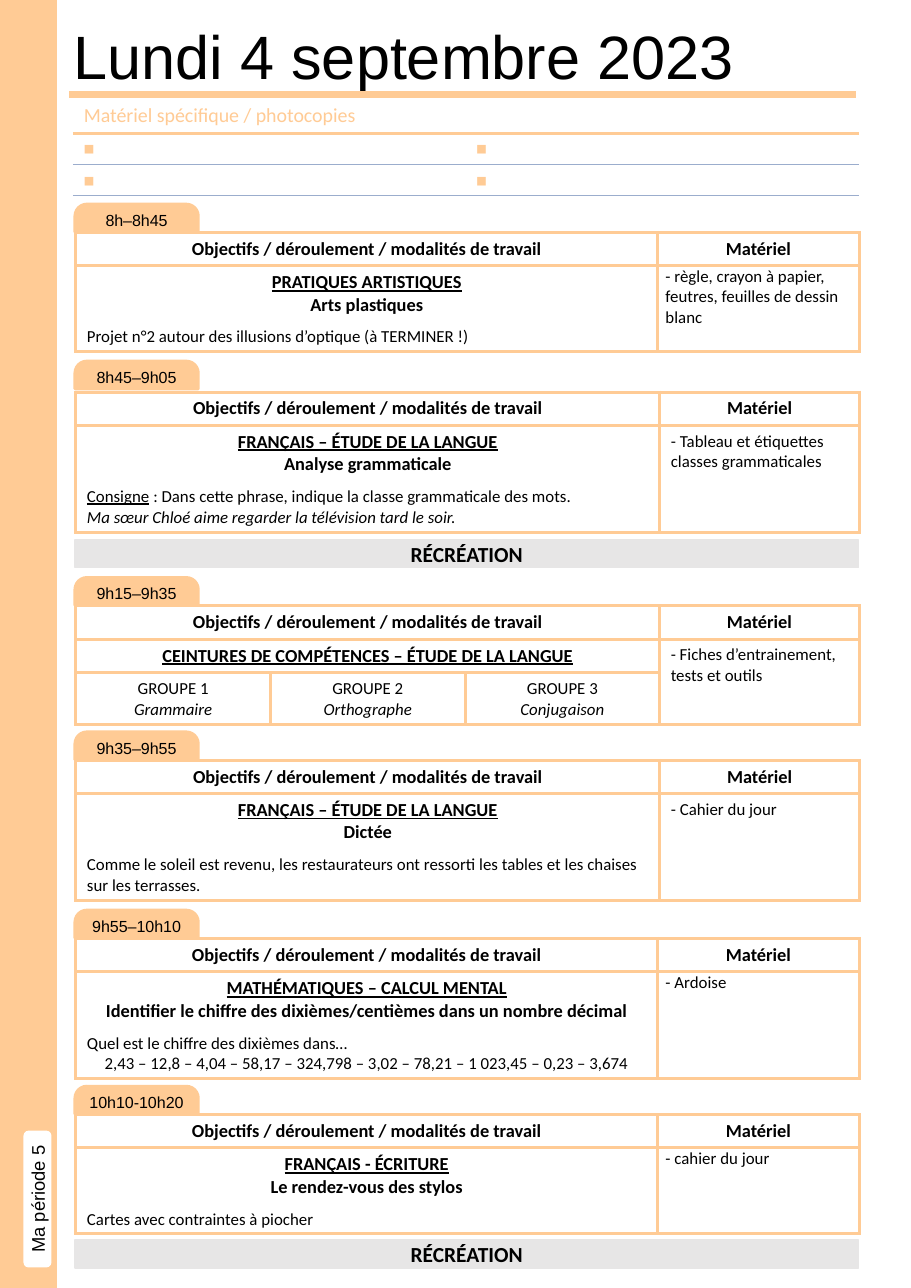
from dataclasses import dataclass

from lxml import etree
from pptx import Presentation
from pptx.dml.color import RGBColor
from pptx.enum.shapes import MSO_CONNECTOR, MSO_SHAPE
from pptx.enum.text import MSO_ANCHOR, PP_ALIGN
from pptx.oxml.ns import qn
from pptx.util import Cm, Pt

LEFT, MID = PP_ALIGN.LEFT, PP_ALIGN.CENTER
TOP, CENTER = MSO_ANCHOR.TOP, MSO_ANCHOR.MIDDLE
RECT, ROUND = MSO_SHAPE.RECTANGLE, MSO_SHAPE.ROUNDED_RECTANGLE
TAB = MSO_SHAPE.ROUND_2_SAME_RECTANGLE
STRAIGHT = MSO_CONNECTOR.STRAIGHT


@dataclass
class Theme:
    peach: str = "FFCB95"
    grey: str = "E7E6E6"
    blue: str = "9BADCD"
    white: str = "FFFFFF"
    black: str = "000000"
    sans: str = "Arial"
    main: str = "Calibri"
    title: float = 40
    band: float = 14
    list: float = 13
    head: float = 12
    body: float = 11
    hour: float = 10.5


THEME = Theme()


@dataclass
class Line:
    """One paragraph; lead is an underlined opening, gap the space before."""
    text: str = ""
    size: float = THEME.body
    bold: bool = False
    under: bool = False
    ital: bool = False
    align: int = LEFT
    gap: float = 0
    lead: str = ""
    font: str = THEME.main
    color: str = THEME.black


def head(text, under=False):
    return Line(text, THEME.head, bold=True, under=under, align=MID)


def write(frame, lines):
    frame.word_wrap = True
    for i, line in enumerate(lines):
        para = frame.add_paragraph() if i else frame.paragraphs[0]
        para.alignment = line.align
        para.space_before = Pt(line.gap)
        font = para.font
        font.size, font.name = Pt(line.size), line.font
        font.bold, font.italic = line.bold, line.ital
        font.underline = line.under
        font.color.rgb = RGBColor.from_string(line.color)
        if line.lead:
            run = para.add_run()
            run.text, run.font.underline = line.lead, True
        if line.text:
            para.add_run().text = line.text


def edge(cell, side, color, width):
    """Draw one cell border; no color means no line."""
    line = etree.SubElement(cell._tc.get_or_add_tcPr(), qn("a:ln" + side))
    if not color:
        etree.SubElement(line, qn("a:noFill"))
        return
    line.set("w", str(Pt(width)))
    fill = etree.SubElement(line, qn("a:solidFill"))
    etree.SubElement(fill, qn("a:srgbClr")).set("val", color)


class Page:
    def __init__(self, slide, theme):
        self.shapes, self.theme = slide.shapes, theme

    def label(self, x, y, w, h, line):
        box = self.shapes.add_textbox(Cm(x), Cm(y), Cm(w), Cm(h))
        write(box.text_frame, [line])

    def box(self, kind, x, y, w, h, color, line=None, width=1):
        box = self.shapes.add_shape(kind, Cm(x), Cm(y), Cm(w), Cm(h))
        box.shadow.inherit = False
        box.fill.solid()
        box.fill.fore_color.rgb = RGBColor.from_string(color)
        box.line.color.rgb = RGBColor.from_string(color)
        box.line.width = Pt(width)
        if line:
            box.text_frame.vertical_anchor = CENTER
            write(box.text_frame, [line])
        return box

    def rule(self, x, y, end, color, width):
        rule = self.shapes.add_connector(STRAIGHT, Cm(x), Cm(y), Cm(end), Cm(y))
        rule.line.color.rgb = RGBColor.from_string(color)
        rule.line.width = Pt(width)
        etree.SubElement(rule.element.spPr, qn("a:effectLst"))

    def grid(self, x, y, cols, rows):
        frame = self.shapes.add_table(len(rows), len(cols), Cm(x), Cm(y),
                                      Cm(sum(cols)), Cm(sum(rows)))
        table = frame.table
        table.first_row = table.horz_banding = False
        for col, width in zip(table.columns, cols):
            col.width = Cm(width)
        for row, height in zip(table.rows, rows):
            row.height = Cm(height)
        return table

    def cell(self, cell, lines, edges, anchor=TOP):
        """Fill a cell; edges gives (color, width) for left, right, top, bottom."""
        for side, (color, width) in zip("LRTB", edges):
            edge(cell, side, color, width)
        cell.fill.solid()
        cell.fill.fore_color.rgb = RGBColor.from_string(self.theme.white)
        cell.vertical_anchor = anchor
        write(cell.text_frame, lines)

    def needs(self):
        """Ruled list of the day's supplies."""
        look = self.theme
        none, thin, thick = (None, 0), (look.blue, 1), (look.peach, 2.25)
        table = self.grid(1.68, 2.26, [9.05, 9.07], [0.81, 0.72, 0.72])
        title = Line("Matériel spécifique / photocopies", look.list,
                     color=look.peach)
        mark = Line("◼︎", color=look.peach)
        rules = [none, thick, thin, thin]
        for r, pair in enumerate([(title, Line()), (mark, mark), (mark, mark)]):
            for c, line in enumerate(pair):
                self.cell(table.cell(r, c), [line],
                          [none, none, rules[r], rules[r + 1]])

    def lesson(self, y, hour, topic, lines, kit, height,
               tight=False, rise=0.65, groups=()):
        """Hour tab above a table; groups splits the work into columns."""
        look = self.theme
        tab = self.box(TAB, 1.73, y - rise, 2.84, 0.64, look.peach,
                       Line(hour, look.hour, align=MID, font=look.sans), 2)
        tab.adjustments[0], tab.adjustments[1] = 0.428, 0
        split, top = (13.41 if tight else 13.46), 0.77
        count = len(groups) or 1
        rows = [top, top, height - 2 * top] if groups else [top, height - top]
        table = self.grid(1.75, y, [split / count] * count + [18.06 - split], rows)

        title = head(topic, under=True)
        work = "Objectifs / déroulement / modalités de travail"
        texts = {(0, 0): [head(work)], (0, count): [head("Matériel")],
                 (1, 0): [title, *lines], (1, count): [Line(kit)]}
        for c, (name, field) in enumerate(groups):
            texts[2, c] = [Line(name, align=MID),
                           Line(field, ital=True, align=MID)]
        if groups:
            table.cell(0, 0).merge(table.cell(0, count - 1))
            table.cell(1, 0).merge(table.cell(1, count - 1))
            table.cell(1, count).merge(table.cell(2, count))
        for r in range(len(rows)):
            for c in range(count + 1):
                anchor = TOP if r and c == count else CENTER
                self.cell(table.cell(r, c), texts.get((r, c), [Line()]),
                          [(look.peach, 2.25)] * 4, anchor)
        if tight:
            note = table.cell(1, count)
            note.margin_left = note.margin_right = Cm(0.18)
            note.margin_top = note.margin_bottom = 0


def main():
    deck = Presentation()
    deck.slide_width, deck.slide_height = Cm(21), Cm(29.7)
    page = Page(deck.slides.add_slide(deck.slide_layouts[6]), THEME)

    page.label(1.45, 0.3, 18.6, 1.96,
               Line("Lundi 4 septembre 2023", THEME.title, font=THEME.sans))
    page.box(RECT, 0, 0, 1.3, 29.7, THEME.peach)
    side = page.box(ROUND, 0.56, 26.09, 0.61, 3.12, THEME.white,
                    Line("Ma période 5", THEME.head, align=MID, font=THEME.sans))
    side.element.txBody.bodyPr.set("vert", "vert270")
    page.rule(1.6, 2.18, 19.74, THEME.peach, 4.75)
    page.needs()

    page.lesson(
        5.36, "8h–8h45", "PRATIQUES ARTISTIQUES",
        [head("Arts plastiques"),
         Line("Projet n°2 autour des illusions d’optique (à TERMINER !)", gap=7)],
        "- règle, crayon à papier, feutres, feuilles de dessin blanc",
        2.74, tight=True)
    page.lesson(
        9.04, "8h45–9h05", "FRANÇAIS – ÉTUDE DE LA LANGUE",
        [head("Analyse grammaticale"),
         Line(" : Dans cette phrase, indique la classe grammaticale des mots.",
              lead="Consigne", gap=7),
         Line("Ma sœur Chloé aime regarder la télévision tard le soir.", ital=True)],
        "- Tableau et étiquettes classes grammaticales", 3.23, rise=0.71)
    page.lesson(
        13.97, "9h15–9h35", "CEINTURES DE COMPÉTENCES – ÉTUDE DE LA LANGUE", [],
        "- Fiches d’entrainement, tests et outils", 2.72,
        groups=[("GROUPE 1", "Grammaire"), ("GROUPE 2", "Orthographe"),
                ("GROUPE 3", "Conjugaison")])
    page.lesson(
        17.53, "9h35–9h55", "FRANÇAIS – ÉTUDE DE LA LANGUE",
        [head("Dictée"),
         Line("Comme le soleil est revenu, les restaurateurs ont ressorti "
              "les tables et les chaises sur les terrasses.", gap=7)],
        "- Cahier du jour", 3.23)
    page.lesson(
        21.64, "9h55–10h10", "MATHÉMATIQUES – CALCUL MENTAL",
        [head("Identifier le chiffre des dixièmes/centièmes dans un nombre décimal"),
         Line("Quel est le chiffre des dixièmes dans…", gap=7),
         Line("2,43 – 12,8 – 4,04 – 58,17 – 324,798 – 3,02 – 78,21 – 1 023,45"
              " – 0,23 – 3,674", align=MID)],
        "- Ardoise", 3.23, tight=True)
    page.lesson(
        25.7, "10h10-10h20", "FRANÇAIS - ÉCRITURE",
        [head("Le rendez-vous des stylos"),
         Line("Cartes avec contraintes à piocher", gap=7)],
        "- cahier du jour", 2.74, tight=True)
    for y in (12.45, 28.6):
        page.box(RECT, 1.73, y, 18.06, 0.64, THEME.grey,
                 Line("RÉCRÉATION", THEME.band, bold=True, align=MID))
    deck.save("out.pptx")


if __name__ == "__main__":
    main()
